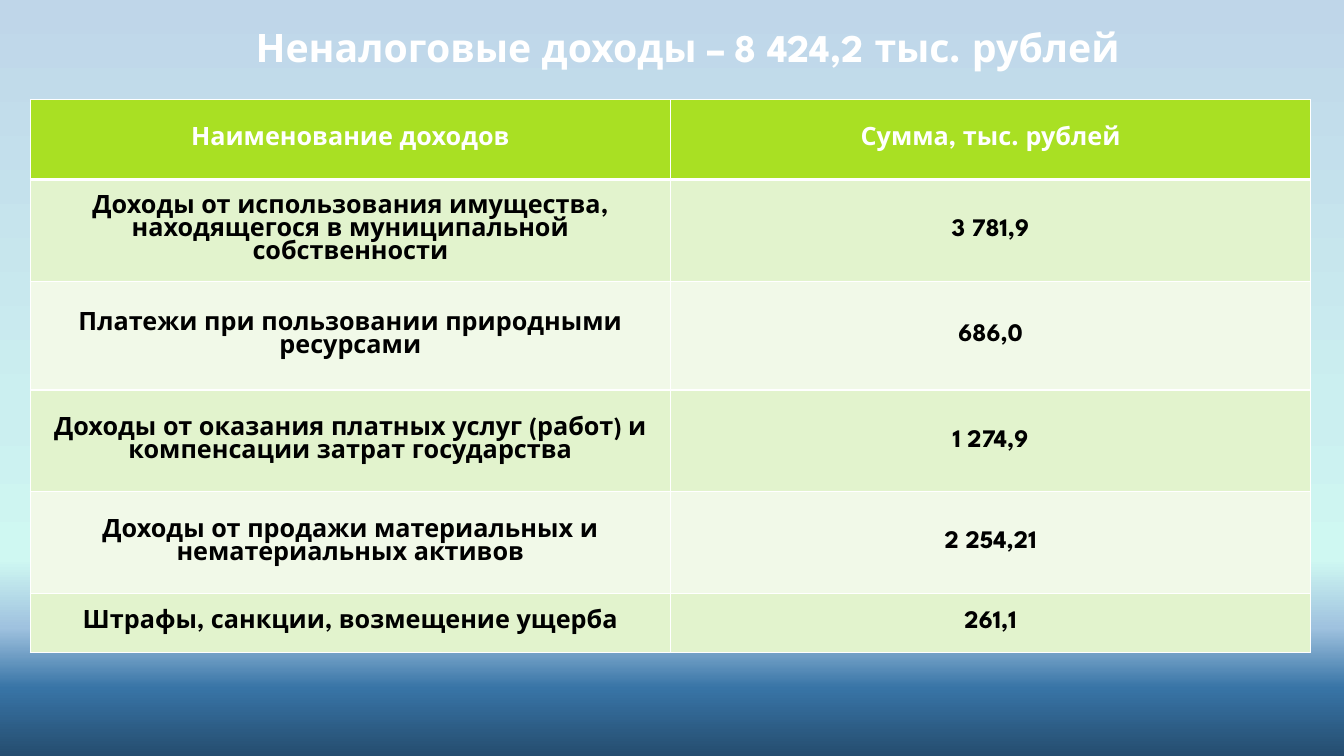
from lxml.etree import SubElement
from pptx import Presentation
from pptx.dml.color import RGBColor as RGB
from pptx.enum.text import MSO_ANCHOR, MSO_AUTO_SIZE, PP_ALIGN
from pptx.oxml.ns import qn
from pptx.util import Inches, Pt

FONT = "League Spartan"
COLORS = {"white": "FFFFFF", "black": "000000", "header": "A9E023",
          "odd": "E2F3CD", "even": "F1F9E8"}
SKY = [(0, "BFD6E9"), (54, "CBEFF0"), (74, "CFF8F2"),
       (83, "9FC2DF"), (91, "3874A6"), (100, "254D6F")]
ROWS = [
    ("Наименование доходов", "Сумма, тыс. рублей", 0.79),
    ("Доходы от использования имущества, находящегося в муниципальной собственности", "3 781,9", 1.01),
    ("Платежи при пользовании природными ресурсами", "686,0", 1.08),
    ("Доходы от оказания платных услуг (работ) и компенсации затрат государства", "1 274,9", 1.01),
    ("Доходы от продажи материальных и нематериальных активов", "2 254,21", 1.01),
    ("Штрафы, санкции, возмещение ущерба", "261,1", 0.58),
]


def format_text(tf, size, color):
    tf.word_wrap = True
    p = tf.paragraphs[0]
    p.alignment = PP_ALIGN.CENTER
    font = p.runs[0].font
    font.name = FONT
    font.size = Pt(size)
    font.bold = True
    font.color.rgb = RGB.from_string(COLORS[color])


def add_border(cell, side, width):
    ln = SubElement(cell._tc.get_or_add_tcPr(), qn(f"a:ln{side}"), w=str(Pt(width)))
    fill = SubElement(ln, qn("a:solidFill"))
    SubElement(fill, qn("a:srgbClr"), val=COLORS["white"])


prs = Presentation()
prs.slide_width = Inches(13.33)
prs.slide_height = Inches(7.5)
s = prs.slides.add_slide(prs.slide_layouts[5])

bg = s.background.fill
bg.gradient()
bg.gradient_angle = 270
stops = s._element.find(".//" + qn("a:gsLst"))
for stop in list(stops):
    stops.remove(stop)
for pos, color in SKY:
    stop = SubElement(stops, qn("a:gs"), pos=str(pos * 1000))
    SubElement(stop, qn("a:srgbClr"), val=color)

title = s.shapes.title
title.left, title.top = Inches(2.2), Inches(0.18)
title.width, title.height = Inches(9.24), Inches(0.57)
tf = title.text_frame
tf.text = "Неналоговые доходы – 8 424,2 тыс. рублей"
tf.auto_size = MSO_AUTO_SIZE.NONE
tf.vertical_anchor = MSO_ANCHOR.MIDDLE
format_text(tf, 28, "white")

height = sum(row[2] for row in ROWS)
table = s.shapes.add_table(len(ROWS), 2, Inches(0.3), Inches(0.99),
                           Inches(12.7), Inches(height)).table
for i, (name, amount, row_height) in enumerate(ROWS):
    table.rows[i].height = Inches(row_height)
    band = "header" if i == 0 else "odd" if i % 2 else "even"
    for j, text in enumerate((name, amount)):
        cell = table.cell(i, j)
        cell.text = text
        cell.vertical_anchor = MSO_ANCHOR.MIDDLE
        format_text(cell.text_frame, 18, "white" if i == 0 else "black")
        for side in "LRTB":
            add_border(cell, side, 3 if (i, side) in ((0, "B"), (1, "T")) else 1)
        cell.fill.solid()
        cell.fill.fore_color.rgb = RGB.from_string(COLORS[band])

prs.save("out.pptx")
